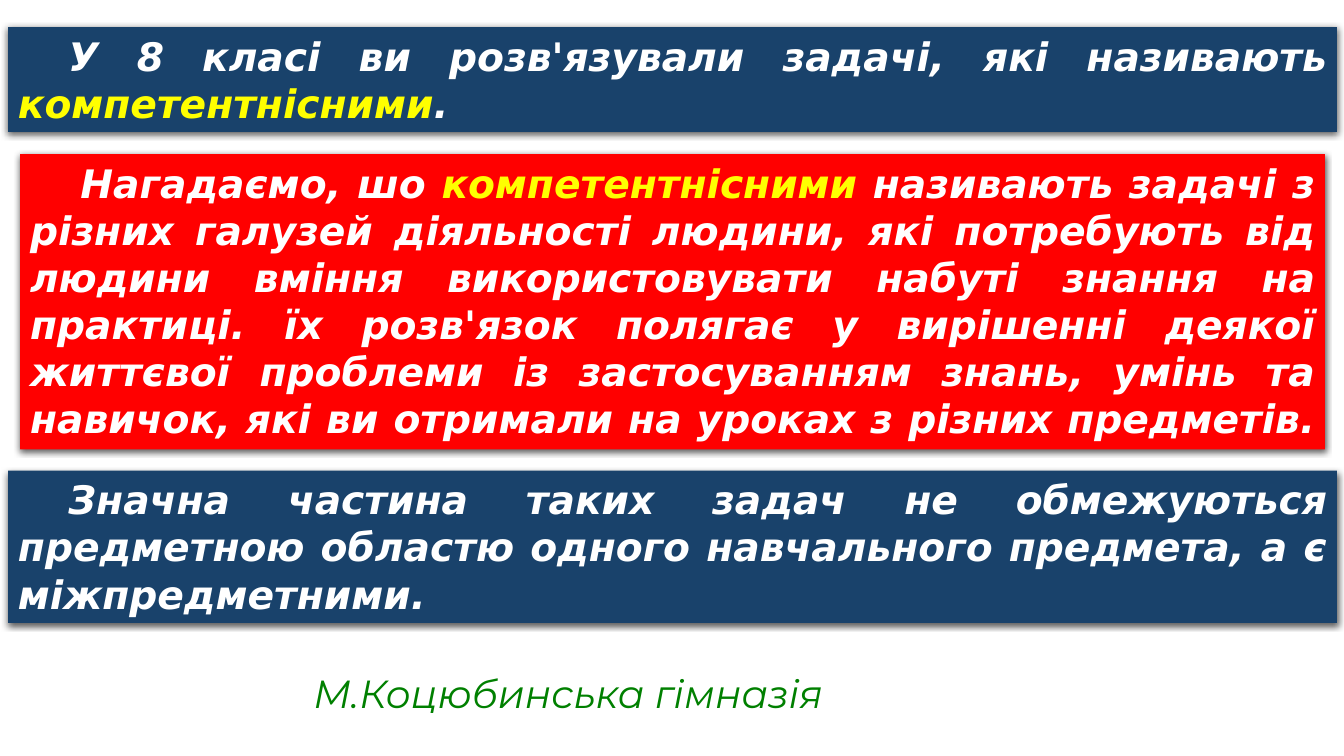
"""Build a slide about competence-based problems with three text panels and a school name."""
from lxml import etree
from pptx import Presentation
from pptx.dml.color import RGBColor
from pptx.enum.shapes import MSO_SHAPE
from pptx.enum.text import MSO_ANCHOR, PP_ALIGN
from pptx.oxml.ns import qn
from pptx.util import Inches, Pt

RECTANGLE = MSO_SHAPE.RECTANGLE
TOP, MIDDLE = MSO_ANCHOR.TOP, MSO_ANCHOR.MIDDLE
JUSTIFY, CENTER = PP_ALIGN.JUSTIFY, PP_ALIGN.CENTER
COLORS = {"navy": "19426B", "red": "FF0000", "white": "FFFFFF",
          "yellow": "FFFF00", "green": "008000", "shadow": "000000"}


def write_text(box, spans, font="DejaVu Sans", bold=True, align=JUSTIFY,
               anchor=TOP, indent=0):
    """Fill a box with one paragraph made of (text, color name) spans."""
    frame = box.text_frame
    frame.word_wrap = True
    frame.vertical_anchor = anchor
    para = frame.paragraphs[0]
    para.alignment = align
    properties = para._p.get_or_add_pPr()
    properties.set("marL", "0")
    properties.set("indent", str(Inches(indent)))
    for text, color in spans:
        span = para.add_run()
        span.text = text
        span.font.name = font
        span.font.size = Pt(28)
        span.font.bold = bold
        span.font.italic = True
        span.font.color.rgb = RGBColor.from_string(COLORS[color])


def add_shadow(box):
    """Give a box a soft shadow that falls straight down."""
    box.shadow.inherit = False
    effects = box._element.spPr.find(qn("a:effectLst"))
    shadow = etree.SubElement(effects, qn("a:outerShdw"), blurRad=str(Pt(4.5)),
                              dist=str(Pt(1.5)), dir="5400000", algn="ctr",
                              rotWithShape="0")
    color = etree.SubElement(shadow, qn("a:srgbClr"), val=COLORS["shadow"])
    etree.SubElement(color, qn("a:alpha"), val="63000")


deck = Presentation()
deck.slide_width, deck.slide_height = Inches(13.33), Inches(7.5)
page = deck.slides.add_slide(deck.slide_layouts[6])

panels = [
    (0.08, 0.27, 13.18, 1.04, "navy", [
        ("У 8 класі ви розв'язували задачі, які називають ", "white"),
        ("компетентнісними", "yellow"),
        (". ", "white")]),
    (0.2, 1.53, 12.94, 2.93, "red", [
        ("Нагадаємо, шо ", "white"),
        ("компетентнісними", "yellow"),
        (" називають задачі з різних галузей діяльності людини, які потребують "
         "від людини вміння використовувати набуті знання на практиці. "
         "їх розв'язок полягає у вирішенні деякої життєвої проблеми "
         "із застосуванням знань, умінь та навичок, які ви отримали "
         "на уроках з різних предметів. ", "white")]),
    (0.08, 4.67, 13.18, 1.51, "navy", [
        ("Значна частина таких задач не обмежуються предметною областю "
         "одного навчального предмета, а є міжпредметними.", "white")]),
]
for left, top, width, height, fill, spans in panels:
    panel = page.shapes.add_shape(RECTANGLE, Inches(left), Inches(top),
                                  Inches(width), Inches(height))
    panel.fill.solid()
    panel.fill.fore_color.rgb = RGBColor.from_string(COLORS[fill])
    panel.line.fill.background()
    add_shadow(panel)
    write_text(panel, spans, indent=0.5)

school = page.shapes.add_textbox(Inches(2.17), Inches(6.6), Inches(6.93), Inches(0.55))
write_text(school, [("М.Коцюбинська гімназія", "green")], font="Montserrat",
           bold=False, align=CENTER, anchor=MIDDLE)

deck.save("out.pptx")
